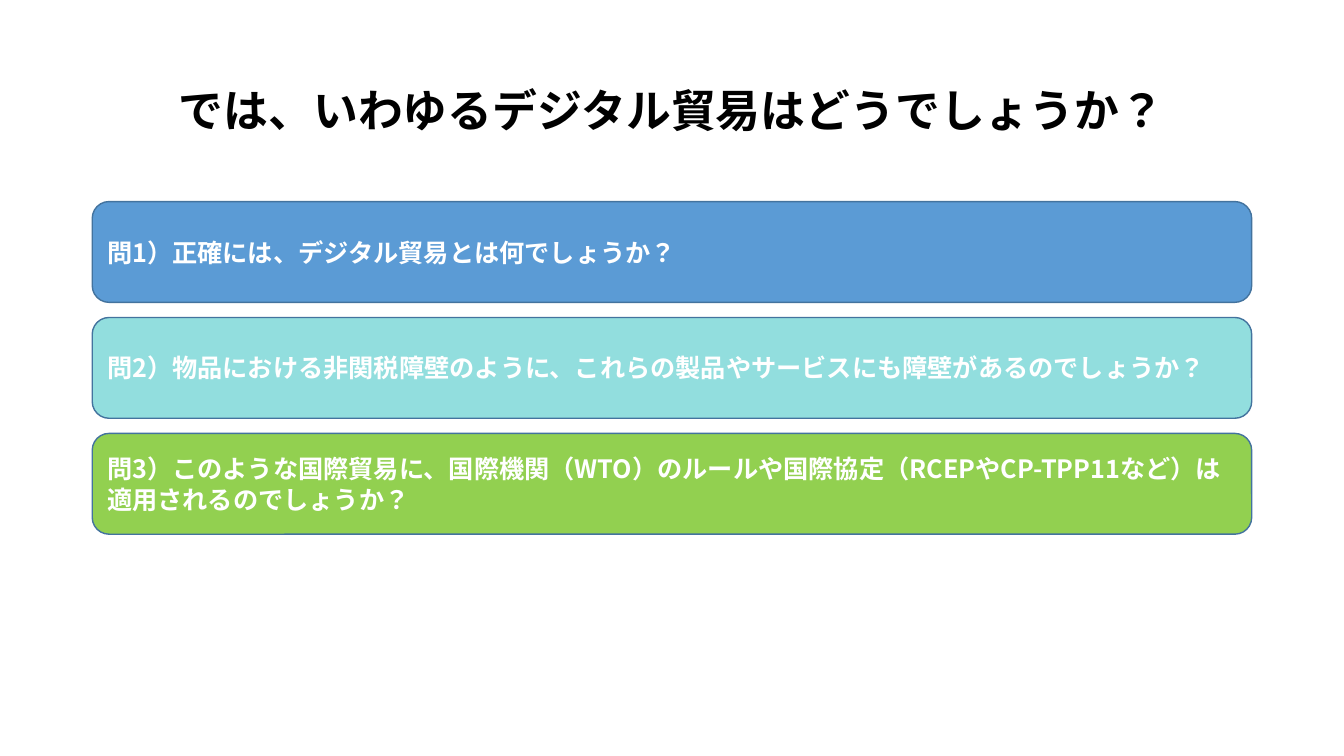
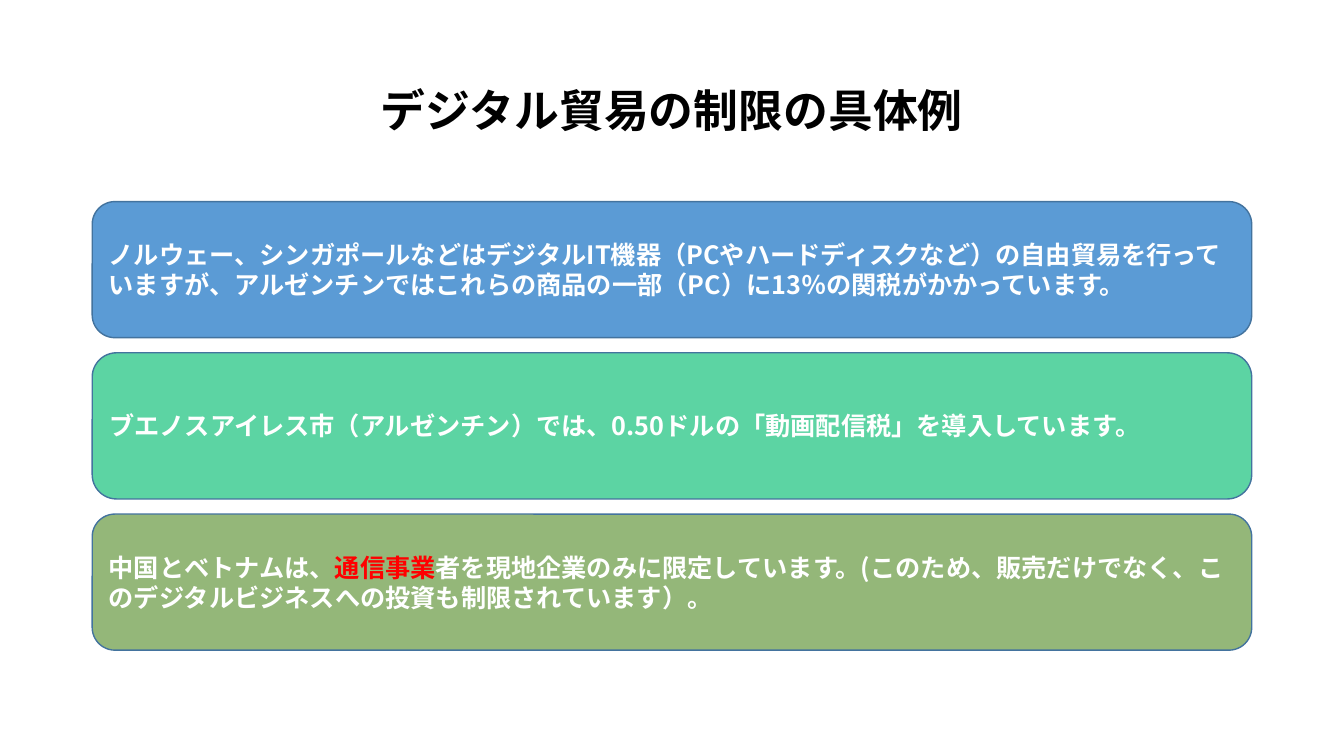
"""Build two slides on digital trade, each a title over stacked rounded panels."""
from dataclasses import dataclass

from lxml import etree
from pptx import Presentation
from pptx.dml.color import RGBColor
from pptx.enum.lang import MSO_LANGUAGE_ID
from pptx.enum.shapes import MSO_SHAPE
from pptx.enum.text import MSO_ANCHOR, PP_ALIGN
from pptx.oxml.ns import qn
from pptx.util import Inches, Pt

ROUNDED = MSO_SHAPE.ROUNDED_RECTANGLE
MIDDLE = MSO_ANCHOR.MIDDLE
LEFT, CENTER = PP_ALIGN.LEFT, PP_ALIGN.CENTER
JAPANESE = MSO_LANGUAGE_ID.JAPANESE

SLIDE_W, SLIDE_H = 13.33, 7.5
BODY_W = 11.5
MARGIN = (SLIDE_W - BODY_W) / 2
TITLE_TOP, TITLE_H = 0.4, 1.45
PANELS_TOP, PANEL_GAP = 2, 0.15

FONT = "Noto Sans CJK JP"
BLACK, WHITE, RED = "000000", "FFFFFF", "FF0000"
BLUE, OUTLINE = "5B9BD5", "43739E"


@dataclass(frozen=True)
class Span:
    """A stretch of text in one colour."""
    text: str
    color: str = WHITE


@dataclass(frozen=True)
class Panel:
    """A rounded panel with its fill, height and text."""
    fill: str
    height: float
    spans: tuple[Span, ...]


@dataclass(frozen=True)
class Page:
    """A slide's title and its panels from top to bottom."""
    title: str
    panels: tuple[Panel, ...]


PAGES = (
    Page("では、いわゆるデジタル貿易はどうでしょうか？", (
        Panel(BLUE, 1, (Span("問1）正確には、デジタル貿易とは何でしょうか？"),)),
        Panel("92DEDE", 1, (Span(
            "問2）物品における非関税障壁のように、"
            "これらの製品やサービスにも障壁があるのでしょうか？"),)),
        Panel("92D050", 1, (Span(
            "問3）このような国際貿易に、国際機関（WTO）のルールや"
            "国際協定（RCEPやCP-TPP11など）は適用されるのでしょうか？"),)),
    )),
    Page("デジタル貿易の制限の具体例", (
        Panel(BLUE, 1.35, (Span(
            "ノルウェー、シンガポールなどはデジタルIT機器"
            "（PCやハードディスクなど）の自由貿易を行っていますが、"
            "アルゼンチンではこれらの商品の一部（PC）に13％の関税がかかっています。"),)),
        Panel("5CD4A3", 1.45, (Span(
            "ブエノスアイレス市（アルゼンチン）では、"
            "0.50ドルの「動画配信税」を導入しています。"),)),
        Panel("94B779", 1.35, (
            Span("中国とベトナムは、"),
            Span("通信事業", RED),
            Span("者を現地企業のみに限定しています。(このため、販売だけでなく、"
                 "このデジタルビジネスへの投資も制限されています）。"),
        )),
    )),
)


def rgb(value: str) -> RGBColor:
    """Turn a hex string into a colour."""
    return RGBColor.from_string(value)


def write(tf, spans: tuple[Span, ...], *, size: float, align=LEFT,
          spacing: float = 1.0) -> None:
    """Fill a text frame with one bold paragraph of coloured spans."""
    tf.word_wrap = True
    tf.vertical_anchor = MIDDLE
    p = tf.paragraphs[0]
    p.alignment = align
    p.line_spacing = spacing
    for span in spans:
        r = p.add_run()
        r.text = span.text
        r.font.size = Pt(size)
        r.font.bold = True
        r.font.color.rgb = rgb(span.color)
        r.font.name = FONT
        r.font.language_id = JAPANESE
        ea = etree.SubElement(r.font._element, qn("a:ea"))
        ea.set("typeface", FONT)


def add_title(s, text: str) -> None:
    """Add the centred slide title."""
    box = s.shapes.add_textbox(Inches(MARGIN), Inches(TITLE_TOP),
                               Inches(BODY_W), Inches(TITLE_H))
    write(box.text_frame, (Span(text, BLACK),), size=32, align=CENTER, spacing=0.9)


def add_panel(s, panel: Panel, top: float) -> None:
    """Add one rounded panel at the given height."""
    sp = s.shapes.add_shape(ROUNDED, Inches(MARGIN), Inches(top),
                            Inches(BODY_W), Inches(panel.height))
    sp.shadow.inherit = False
    sp.fill.solid()
    sp.fill.fore_color.rgb = rgb(panel.fill)
    sp.line.color.rgb = rgb(OUTLINE)
    sp.line.width = Pt(1)
    write(sp.text_frame, panel.spans, size=18)


def add_page(prs, page: Page) -> None:
    """Add a slide and stack its panels below the title."""
    s = prs.slides.add_slide(prs.slide_layouts[6])
    add_title(s, page.title)
    top = PANELS_TOP
    for panel in page.panels:
        add_panel(s, panel, top)
        top += panel.height + PANEL_GAP


def main() -> None:
    """Build and save the presentation."""
    prs = Presentation()
    prs.slide_width, prs.slide_height = Inches(SLIDE_W), Inches(SLIDE_H)
    for page in PAGES:
        add_page(prs, page)
    prs.save("out.pptx")


if __name__ == "__main__":
    main()
